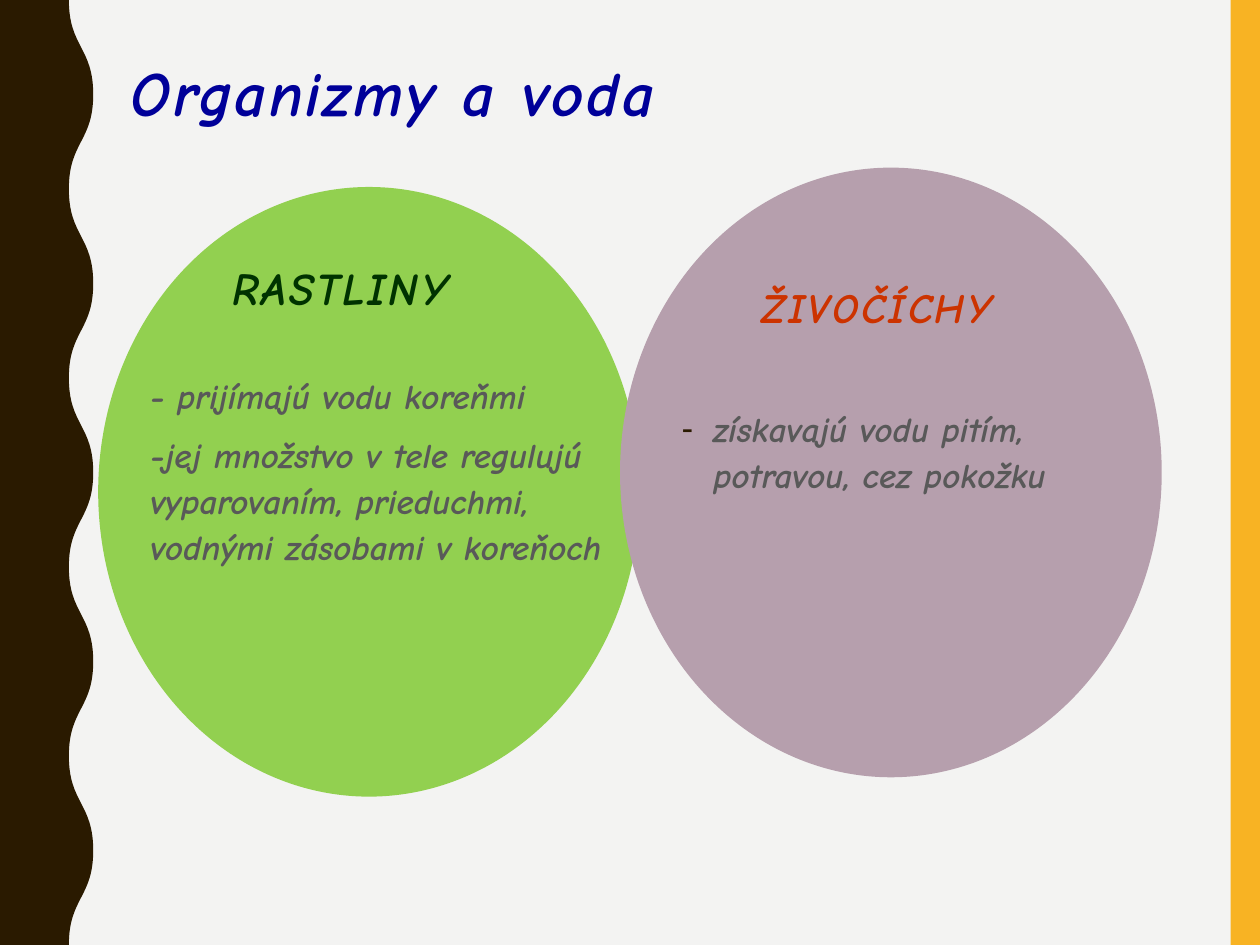
from dataclasses import dataclass

from lxml.etree import SubElement
from pptx import Presentation
from pptx.dml.color import RGBColor
from pptx.enum.shapes import MSO_SHAPE as Preset
from pptx.enum.text import MSO_ANCHOR as Anchor
from pptx.oxml.ns import qn
from pptx.util import Cm, Pt

COLORS = {
    "page": "F3F3F2", "wave": "2A1A00", "stripe": "F8B323",
    "plants": "92D050", "animals": "B69FAD", "title": "000099",
    "plants_head": "003300", "animals_head": "CC3300", "body": "595959",
}
FONT = "Comic Neue"
WIDTH, HEIGHT = 25.4, 19.05
WAVE_IN, WAVE_OUT = 1.39, 1.88
HALF_WAVES = 10


@dataclass
class Solid:
    preset: Preset
    at: tuple[float, float, float, float]
    color: str


@dataclass
class Label:
    at: tuple[float, float, float, float]
    lines: list[str]
    size: float
    color: str
    spacing: float = 1.0
    before: float = 7
    tracking: float = 0
    anchor: Anchor = Anchor.TOP
    bullet: str = ""


STRIPE = Solid(Preset.RECTANGLE, (24.81, 0, 0.59, HEIGHT), "stripe")
CIRCLES = [
    Solid(Preset.OVAL, (1.98, 3.77, 10.92, 12.29), "plants"),
    Solid(Preset.OVAL, (12.5, 3.38, 10.92, 12.29), "animals"),
]
LABELS = [
    Label((2.39, 1.12, 22.86, 3.18), ["Organizmy a voda"], 36, "title",
          spacing=0.9, before=0, tracking=1.5),
    Label((4.44, 4.68, 5.87, 1.78), ["RASTLINY"], 25.9, "plants_head",
          tracking=1.5, anchor=Anchor.BOTTOM),
    Label((2.78, 7.35, 10.11, 10.97),
          ["- prijímajú vodu koreňmi",
           "-jej množstvo v tele regulujú vyparovaním, prieduchmi, "
           "vodnými zásobami v koreňoch"],
          20, "body", spacing=1.1),
    Label((15.11, 5.05, 6.15, 1.78), ["ŽIVOČÍCHY"], 23.8, "animals_head",
          spacing=0.9, tracking=1.5, anchor=Anchor.BOTTOM),
    Label((13.49, 8.01, 9.32, 4.39), ["získavajú vodu pitím, potravou, cez pokožku"],
          20, "body", spacing=1.1, bullet="-"),
]


def rgb(name: str) -> RGBColor:
    return RGBColor.from_string(COLORS[name])


def paint(shape, color: str) -> None:
    shape.shadow.inherit = False
    shape.fill.solid()
    shape.fill.fore_color.rgb = rgb(color)
    shape.line.fill.background()


def draw_solid(page, solid: Solid) -> None:
    paint(page.shapes.add_shape(solid.preset, *map(Cm, solid.at)), solid.color)


def bend(segment, start: tuple[int, int], end: tuple[int, int]) -> None:
    middle = (start[1] + end[1]) // 2
    segment.tag = qn("a:cubicBezTo")
    segment.clear()
    for x, y in ((start[0], middle), (end[0], middle), end):
        SubElement(segment, qn("a:pt"), x=str(x), y=str(y))


def draw_wave(page) -> None:
    crests = [(Cm((WAVE_IN, WAVE_OUT)[index % 2]), Cm(HEIGHT * index / HALF_WAVES))
              for index in range(HALF_WAVES + 1)]
    builder = page.shapes.build_freeform(*crests[0])
    builder.add_line_segments([*crests[1:], (0, Cm(HEIGHT)), (0, 0)], close=True)
    wave = builder.convert_to_shape()
    outline = wave._element.find(".//" + qn("a:path"))
    for line, start, end in zip(outline.findall(qn("a:lnTo")), crests, crests[1:]):
        curve = SubElement(outline, qn("a:cubicBezTo"))
        outline.replace(line, curve)
        bend(curve, start, end)
    paint(wave, "wave")


def add_bullet(para, mark: str) -> None:
    props = para._p.get_or_add_pPr()
    props.set("marL", str(Cm(0.64)))
    props.set("indent", str(-Cm(0.64)))
    color = SubElement(props, qn("a:buClr"))
    SubElement(color, qn("a:srgbClr"), val=COLORS["wave"])
    SubElement(props, qn("a:buFont"), typeface="Arial")
    SubElement(props, qn("a:buChar"), char=mark)


def draw_label(page, label: Label) -> None:
    frame = page.shapes.add_textbox(*map(Cm, label.at)).text_frame
    frame.word_wrap = True
    frame.vertical_anchor = label.anchor
    for index, line in enumerate(label.lines):
        para = frame.add_paragraph() if index else frame.paragraphs[0]
        para.line_spacing = label.spacing
        para.space_before = Pt(label.before)
        if label.bullet:
            add_bullet(para, label.bullet)
        span = para.add_run()
        span.text = line
        font = span.font
        font.name, font.size = FONT, Pt(label.size)
        font.bold = font.italic = True
        font.color.rgb = rgb(label.color)
        if label.tracking:
            span._r.get_or_add_rPr().set("spc", str(round(label.tracking * 100)))


def main() -> None:
    """Build the slide on organisms and water."""
    deck = Presentation()
    deck.slide_width, deck.slide_height = Cm(WIDTH), Cm(HEIGHT)
    page = deck.slides.add_slide(deck.slide_layouts[6])
    page.background.fill.solid()
    page.background.fill.fore_color.rgb = rgb("page")
    draw_solid(page, STRIPE)
    draw_wave(page)
    for circle in CIRCLES:
        draw_solid(page, circle)
    for label in LABELS:
        draw_label(page, label)
    deck.save("out.pptx")


if __name__ == "__main__":
    main()
